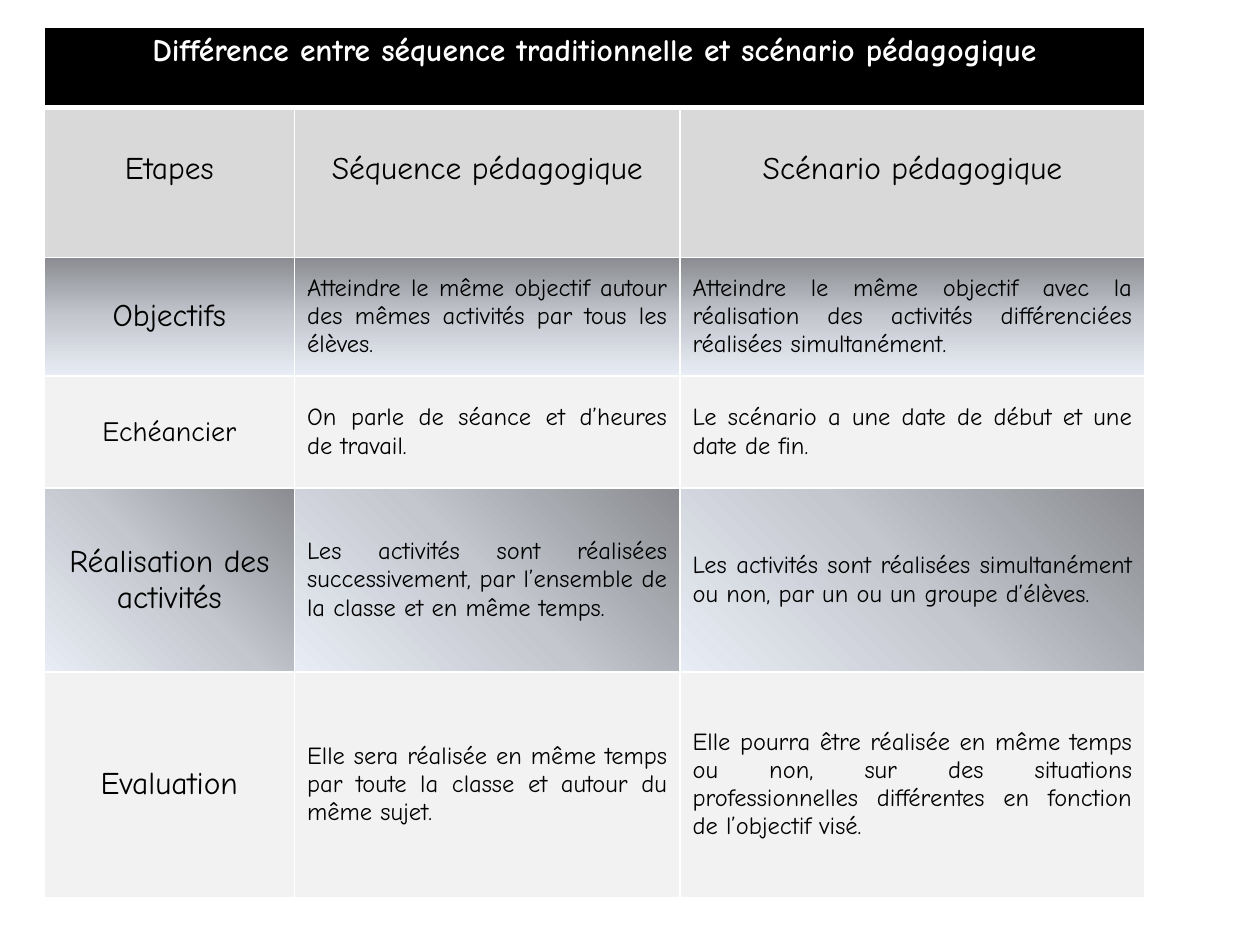
from dataclasses import dataclass
from typing import Union

import pptx
import pptx.dml.color
import pptx.enum.text
import pptx.oxml
import pptx.oxml.ns
import pptx.util

Pt = pptx.util.Pt
ALIGN = pptx.enum.text.PP_ALIGN
ANCHOR = pptx.enum.text.MSO_ANCHOR
FONT = "Comic Neue"
STOPS = ((0, "8A8C91"), (50, "C4C7CE"), (100, "E8ECF4"))
LEFT, TOP = 25.2, 15.3
COLUMN_WIDTHS = (143.1, 220.3, 265.7)


@dataclass
class Gradient:
    angle: int


@dataclass
class Step:
    height: float
    fill: Union[str, Gradient]
    texts: tuple
    label_size: int = 18
    text_size: int = 14
    color: str = "000000"
    bold: bool = False
    text_align: int = ALIGN.JUSTIFY
    anchor: int = ANCHOR.MIDDLE
    margin_top: float = 3.6
    border_top: float = 1
    border_bottom: float = 1


STEPS = (
    Step(46.1, "000000",
         ("Différence entre séquence traditionnelle et scénario pédagogique",),
         color="FFFFFF", bold=True, anchor=ANCHOR.TOP, border_bottom=3),
    Step(85.7, "D9D9D9",
         ("Etapes", "Séquence pédagogique", "Scénario pédagogique"),
         text_size=18, text_align=ALIGN.CENTER, anchor=ANCHOR.TOP,
         margin_top=24.7, border_top=3),
    Step(67.7, Gradient(90),
         ("Objectifs",
          "Atteindre le même objectif autour des mêmes activités par tous les élèves.",
          "Atteindre le même objectif avec la réalisation des activités "
          "différenciées réalisées simultanément.")),
    Step(67.1 - 3, "F2F2F2",
         ("Echéancier",
          "On parle de séance et d’heures de travail.",
          "Le scénario a une date de début et une date de fin."),
         label_size=16),
    Step(105.1, Gradient(135),
         ("Réalisation des activités",
          "Les activités sont réalisées successivement, par l’ensemble de la "
          "classe et en même temps.",
          "Les activités sont réalisées simultanément ou non, par un ou un "
          "groupe d’élèves.")),
    Step(128.9, "F2F2F2",
         ("Evaluation",
          "Elle sera réalisée en même temps par toute la classe et autour du "
          "même sujet.",
          "Elle pourra être réalisée en même temps ou non, sur des situations "
          "professionnelles différentes en fonction de l’objectif visé.")),
)


def rgb(value: str) -> pptx.dml.color.RGBColor:
    return pptx.dml.color.RGBColor.from_string(value)


def add_xml(parent, xml: str) -> None:
    ns = pptx.oxml.ns.nsdecls("a")
    tag, rest = xml.split(" ", 1)
    parent.append(pptx.oxml.parse_xml(f"{tag} {ns} {rest}"))


def set_borders(cell, step: Step) -> None:
    tcPr = cell._tc.get_or_add_tcPr()
    widths = {"L": 1, "R": 1, "T": step.border_top, "B": step.border_bottom}
    for side, width in widths.items():
        add_xml(tcPr, f'<a:ln{side} w="{Pt(width)}"><a:solidFill>'
                      f'<a:srgbClr val="FFFFFF"/></a:solidFill></a:ln{side}>')


def set_fill(cell, fill: Union[str, Gradient]) -> None:
    if isinstance(fill, str):
        cell.fill.solid()
        cell.fill.fore_color.rgb = rgb(fill)
        return
    stops = "".join(f'<a:gs pos="{pos * 1000}"><a:srgbClr val="{color}"/></a:gs>'
                    for pos, color in STOPS)
    add_xml(cell._tc.get_or_add_tcPr(),
            f'<a:gradFill rotWithShape="1"><a:gsLst>{stops}</a:gsLst>'
            f'<a:lin ang="{fill.angle * 60000}" scaled="0"/></a:gradFill>')


def set_text(cell, step: Step, col: int) -> None:
    cell.vertical_anchor = step.anchor
    cell.margin_top = Pt(step.margin_top)
    p = cell.text_frame.paragraphs[0]
    p.alignment = step.text_align if col else ALIGN.CENTER
    r = p.add_run()
    r.text = step.texts[col]
    r.font.name = FONT
    r.font.size = Pt(step.text_size if col else step.label_size)
    r.font.bold = step.bold
    r.font.color.rgb = rgb(step.color)


def add_steps(s) -> None:
    heights = [step.height for step in STEPS]
    table = s.shapes.add_table(len(STEPS), len(COLUMN_WIDTHS), Pt(LEFT), Pt(TOP),
                               Pt(sum(COLUMN_WIDTHS)), Pt(sum(heights))).table
    table.first_row = False
    table.horz_banding = False
    for column, width in zip(table.columns, COLUMN_WIDTHS):
        column.width = Pt(width)
    for i, step in enumerate(STEPS):
        table.rows[i].height = Pt(step.height)
        for col in range(len(COLUMN_WIDTHS)):
            cell = table.cell(i, col)
            set_borders(cell, step)
            set_fill(cell, step.fill)
            if col < len(step.texts):
                set_text(cell, step, col)
    table.cell(0, 0).merge(table.cell(0, len(COLUMN_WIDTHS) - 1))


def main() -> None:
    prs = pptx.Presentation()
    prs.slide_width, prs.slide_height = Pt(720), Pt(540)
    s = prs.slides.add_slide(prs.slide_layouts[6])
    add_steps(s)
    prs.save("out.pptx")


if __name__ == "__main__":
    main()
